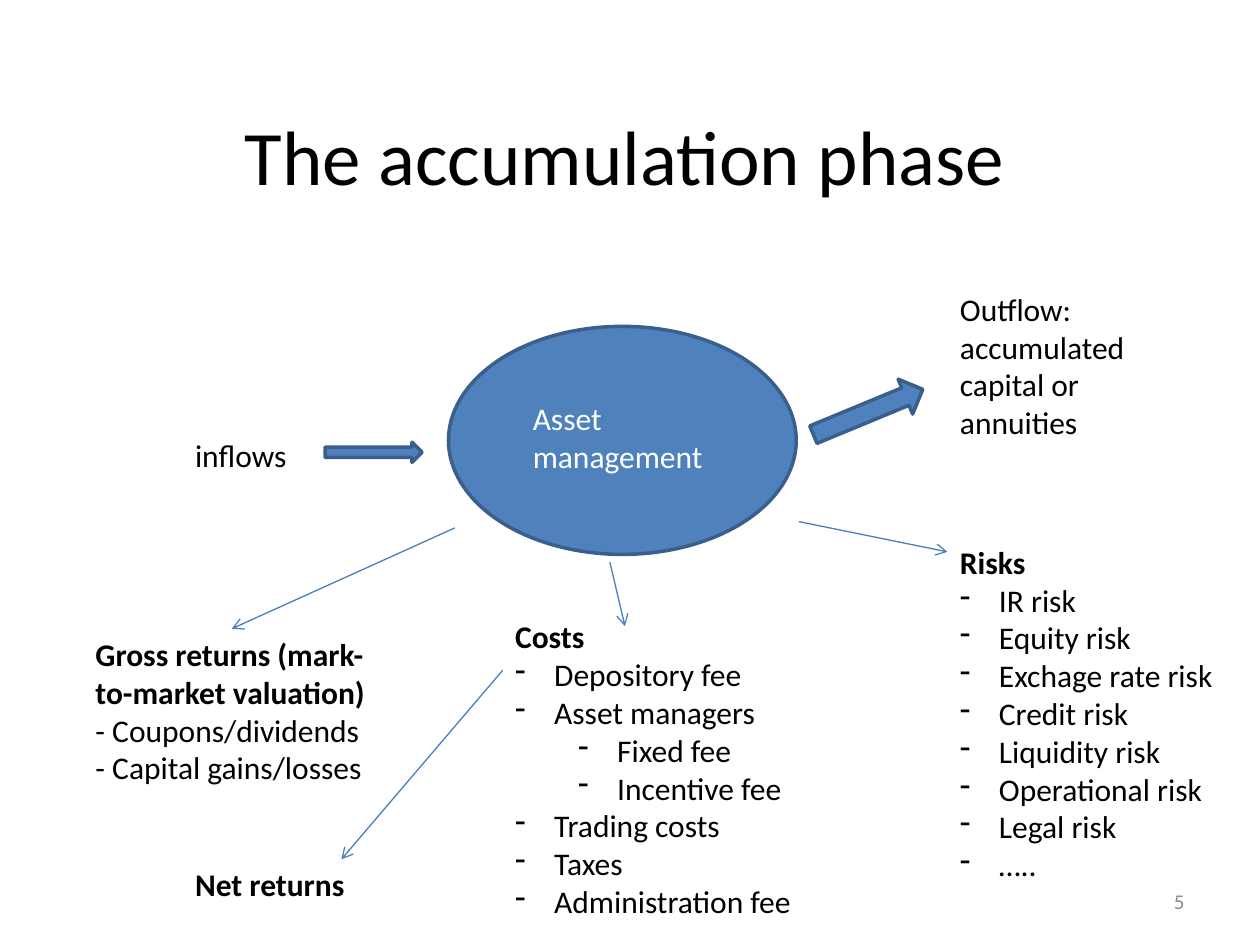
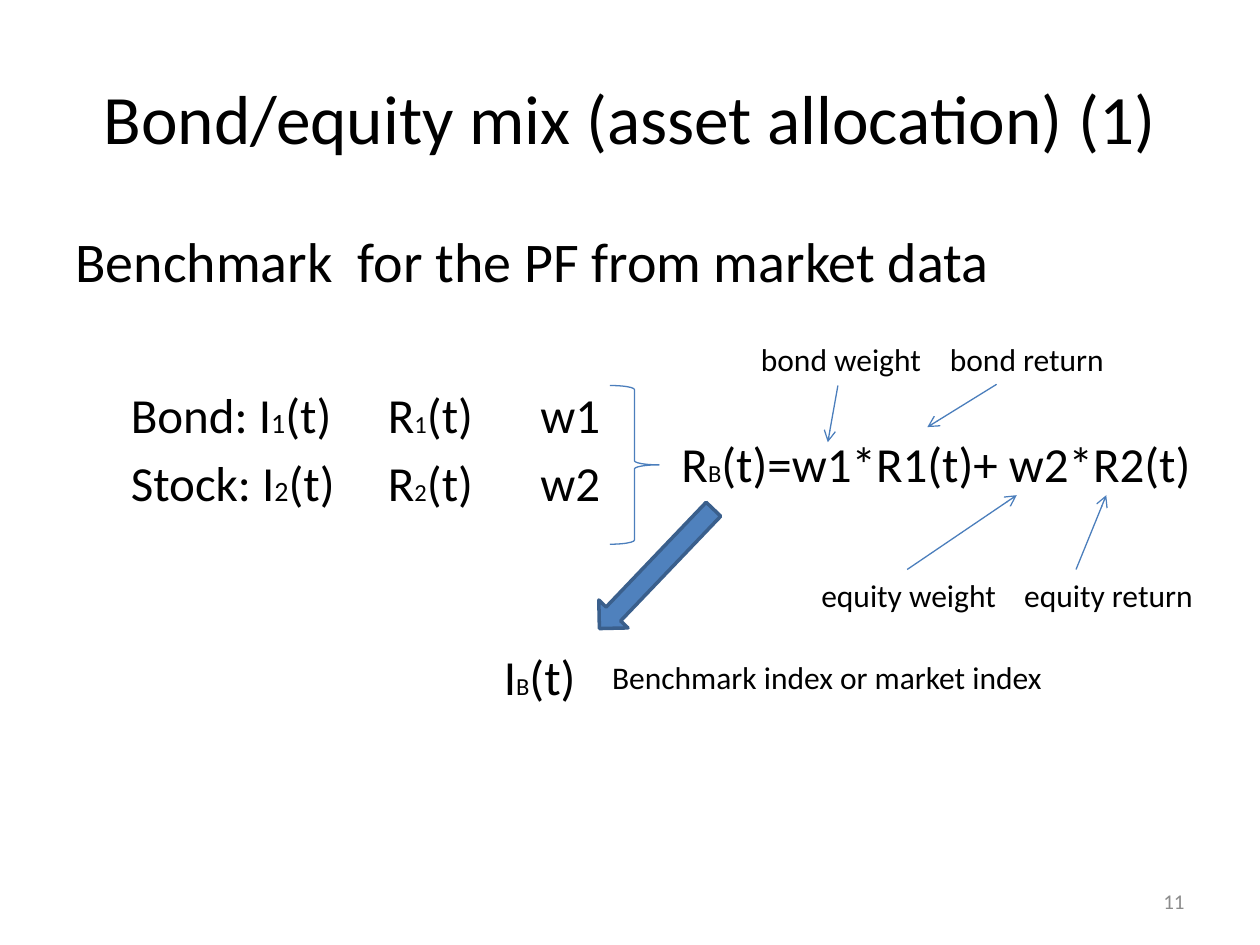
from dataclasses import dataclass
from itertools import zip_longest

from lxml.etree import SubElement
from pptx import Presentation
from pptx.dml.color import RGBColor
from pptx.enum.shapes import MSO_CONNECTOR, MSO_SHAPE
from pptx.enum.text import MSO_ANCHOR, PP_ALIGN
from pptx.oxml.ns import qn
from pptx.util import Pt

EMU_PER_PX = 9144  # 100 px to the inch
TITLE_ONLY = 5


@dataclass(frozen=True)
class Theme:
    font: str = "Calibri"
    text: str = "000000"
    light: str = "FFFFFF"
    muted: str = "8C8C8C"
    fill: str = "4F81BD"
    outline: str = "3A5F8C"
    arrow: str = "4B7EBC"
    title_size: float = 44
    long_title_size: float = 39.6
    lead_size: float = 32
    formula_size: float = 28
    label_size: float = 18
    number_size: float = 12
    index_size: float = 16
    subscript_size: float = 14
    outline_width: float = 2
    arrow_width: float = 0.75


THEME = Theme()


@dataclass(frozen=True)
class Box:
    left: int
    top: int
    width: int
    height: int

    def inner(self, left, top, width, height):
        """Return a box whose corner is measured from this box."""
        return Box(self.left + left, self.top + top, width, height)

    def emu(self):
        return [px(v) for v in (self.left, self.top, self.width, self.height)]


def px(length):
    return length * EMU_PER_PX


SLIDE = Box(0, 0, 1000, 750)
NUMBER_BOX = SLIDE.inner(717, 695, 233, 40)


def rgb(color):
    return RGBColor.from_string(color)


def write(frame, text, size=THEME.label_size, color=THEME.text, bold=False,
          align=PP_ALIGN.LEFT, subscripts=(), bullet_indent=None, tabs=(), after=0):
    """Add a paragraph; pieces between underscores take the subscript sizes."""
    paragraph = frame.paragraphs[0]
    if paragraph.runs:
        paragraph = frame.add_paragraph()
    paragraph.alignment = align
    paragraph.space_after = Pt(after)
    properties = paragraph._p.get_or_add_pPr()
    if bullet_indent is not None:
        properties.set("marL", str(px(bullet_indent)))
        properties.set("indent", str(px(-31)))
        SubElement(properties, qn("a:buChar"), char="-")
    if tabs:
        tab_list = SubElement(properties, qn("a:tabLst"))
        for position in tabs:
            SubElement(tab_list, qn("a:tab"), pos=str(px(position)), algn="l")
    pieces = text.split("_")
    for normal, small, small_size in zip_longest(pieces[::2], pieces[1::2], subscripts):
        for content, content_size in ((normal, size), (small, small_size)):
            if content:
                run = paragraph.add_run()
                run.text = content
                run.font.name = THEME.font
                run.font.size = Pt(content_size)
                run.font.bold = bold
                run.font.color.rgb = rgb(color)


def add_frame(slide, box, anchor=MSO_ANCHOR.TOP):
    frame = slide.shapes.add_textbox(*box.emu()).text_frame
    frame.word_wrap = True
    frame.vertical_anchor = anchor
    return frame


def add_label(slide, box, text, **text_format):
    write(add_frame(slide, box), text, **text_format)


def add_dashed_list(slide, box, heading, items):
    """Items are pairs of level and text."""
    frame = add_frame(slide, box)
    write(frame, heading, bold=True)
    for level, text in items:
        write(frame, text, bullet_indent=31 + 50 * level)


def add_solid(slide, kind, box, rotation=0):
    shape = slide.shapes.add_shape(kind, *box.emu())
    shape.shadow.inherit = False
    shape.rotation = rotation
    shape.fill.solid()
    shape.fill.fore_color.rgb = rgb(THEME.fill)
    shape.line.color.rgb = rgb(THEME.outline)
    shape.line.width = Pt(THEME.outline_width)


def add_arrow(slide, box, start, end):
    """Draw a thin arrow between two points measured from the box."""
    points = [px(base + offset) for point in (start, end)
              for base, offset in zip((box.left, box.top), point)]
    connector = slide.shapes.add_connector(MSO_CONNECTOR.STRAIGHT, *points)
    connector.line.color.rgb = rgb(THEME.arrow)
    connector.line.width = Pt(THEME.arrow_width)
    properties = connector._element.spPr
    SubElement(properties.find(qn("a:ln")), qn("a:tailEnd"), type="arrow")
    SubElement(properties, qn("a:effectLst"))


def add_slide(presentation, title, box, number, size=THEME.title_size):
    slide = presentation.slides.add_slide(presentation.slide_layouts[TITLE_ONLY])
    shape = slide.shapes.title
    shape.left, shape.top, shape.width, shape.height = box.emu()
    shape.text_frame.vertical_anchor = MSO_ANCHOR.MIDDLE
    write(shape.text_frame, title, size=size, align=PP_ALIGN.CENTER)
    write(add_frame(slide, NUMBER_BOX, MSO_ANCHOR.MIDDLE), str(number),
          size=THEME.number_size, color=THEME.muted, align=PP_ALIGN.RIGHT)
    return slide


def draw_flow(slide, box):
    """Inflows through asset management to the outflow."""
    add_label(slide, box.inner(0, 116, 126, 40), "inflows")
    add_solid(slide, MSO_SHAPE.RIGHT_ARROW, box.inner(113, 126, 77, 16))
    add_solid(slide, MSO_SHAPE.OVAL, box.inner(211, 34, 276, 181))
    add_label(slide, box.inner(268, 87, 165, 71), "Asset management", color=THEME.light)
    add_solid(slide, MSO_SHAPE.RIGHT_ARROW, box.inner(497, 87, 94, 30), rotation=337.5)
    add_label(slide, box.inner(607, 0, 181, 131),
              "Outflow: accumulated capital or annuities")


def draw_returns(slide, box):
    frame = add_frame(slide, box.inner(0, 80, 236, 131))
    write(frame, "Gross returns (mark-to-market valuation)", bold=True)
    for text in ("- Coupons/dividends", "- Capital gains/losses"):
        write(frame, text)
    add_label(slide, box.inner(79, 263, 211, 40), "Net returns", bold=True)
    add_arrow(slide, box, (295, 0), (118, 80))
    add_arrow(slide, box, (333, 113), (205, 263))


def draw_costs(slide, box):
    add_dashed_list(slide, box.inner(0, 39, 268, 259), "Costs", (
        (0, "Depository fee"), (0, "Asset managers"), (1, "Fixed fee"),
        (1, "Incentive fee"), (0, "Trading costs"), (0, "Taxes"),
        (0, "Administration fee")))
    add_arrow(slide, box, (85, 0), (97, 51))


def draw_risks(slide, box):
    risks = ("IR risk", "Equity risk", "Exchage rate risk", "Credit risk",
             "Liquidity risk", "Operational risk", "Legal risk", "…..")
    add_dashed_list(slide, box.inner(118, 12, 228, 313), "Risks",
                    [(0, risk) for risk in risks])
    add_arrow(slide, box, (0, 0), (118, 24))


def draw_market_data(slide, box):
    """Benchmark lead line, and the two rows held by a brace."""
    add_label(slide, box.inner(0, 0, 900, 64), "Benchmark  for the PF from market data",
              size=THEME.lead_size)
    rows = add_frame(slide, box.inner(44, 125, 430, 120))
    for name, index in (("Bond", 1), ("Stock", 2)):
        write(rows, f"{name}: I_{index}_(t)\tR_{index}_(t)\tw{index}",
              size=THEME.formula_size, tabs=(204, 325), after=5.6,
              subscripts=(THEME.index_size, THEME.subscript_size))
    brace = slide.shapes.add_shape(MSO_SHAPE.RIGHT_BRACE,
                                   *box.inner(434, 131, 39, 126).emu())
    brace.shadow.inherit = False
    brace.fill.background()
    brace.line.color.rgb = rgb(THEME.arrow)
    brace.line.width = Pt(THEME.arrow_width)


def draw_formula(slide, box):
    """Benchmark return with an arrow between each label and its term."""
    add_label(slide, box.inner(0, 74, 449, 57), "R_B_(t)=w1*R1(t)+ w2*R2(t)",
              size=THEME.formula_size, subscripts=(THEME.subscript_size,))
    for text, left, top, start, end in (
            ("bond weight", 63, 0, (134, 41), (126, 86)),
            ("bond return", 213, 0, (260, 40), (205, 74)),
            ("equity weight", 111, 187, (189, 187), (276, 128)),
            ("equity return", 272, 187, (323, 187), (347, 128))):
        add_label(slide, box.inner(left, top, 165, 40), text)
        add_arrow(slide, box, start, end)


def draw_index(slide, box):
    add_solid(slide, MSO_SHAPE.DOWN_ARROW, box.inner(115, 0, 32, 131), rotation=43.7)
    add_label(slide, box.inner(0, 122, 102, 57), "I_B_(t)",
              size=THEME.formula_size, subscripts=(THEME.subscript_size,))
    add_label(slide, box.inner(86, 131, 390, 40), "Benchmark index or market index")


def build_accumulation(presentation):
    slide = add_slide(presentation, "The accumulation phase",
                      SLIDE.inner(46, 60, 900, 125), 5)
    draw_flow(slide, SLIDE.inner(145, 225, 788, 215))
    draw_returns(slide, SLIDE.inner(66, 419, 333, 303))
    draw_costs(slide, SLIDE.inner(399, 446, 268, 298))
    draw_risks(slide, SLIDE.inner(634, 414, 346, 325))


def build_allocation(presentation):
    slide = add_slide(presentation, "Bond/equity mix (asset allocation) (1)",
                      SLIDE.inner(50, 30, 900, 125), 11, size=THEME.long_title_size)
    draw_market_data(slide, SLIDE.inner(50, 175, 900, 257))
    draw_formula(slide, SLIDE.inner(531, 265, 449, 227))
    draw_index(slide, SLIDE.inner(390, 386, 476, 179))


def main():
    presentation = Presentation()
    presentation.slide_width = px(SLIDE.width)
    presentation.slide_height = px(SLIDE.height)
    build_accumulation(presentation)
    build_allocation(presentation)
    presentation.save("out.pptx")


if __name__ == "__main__":
    main()
